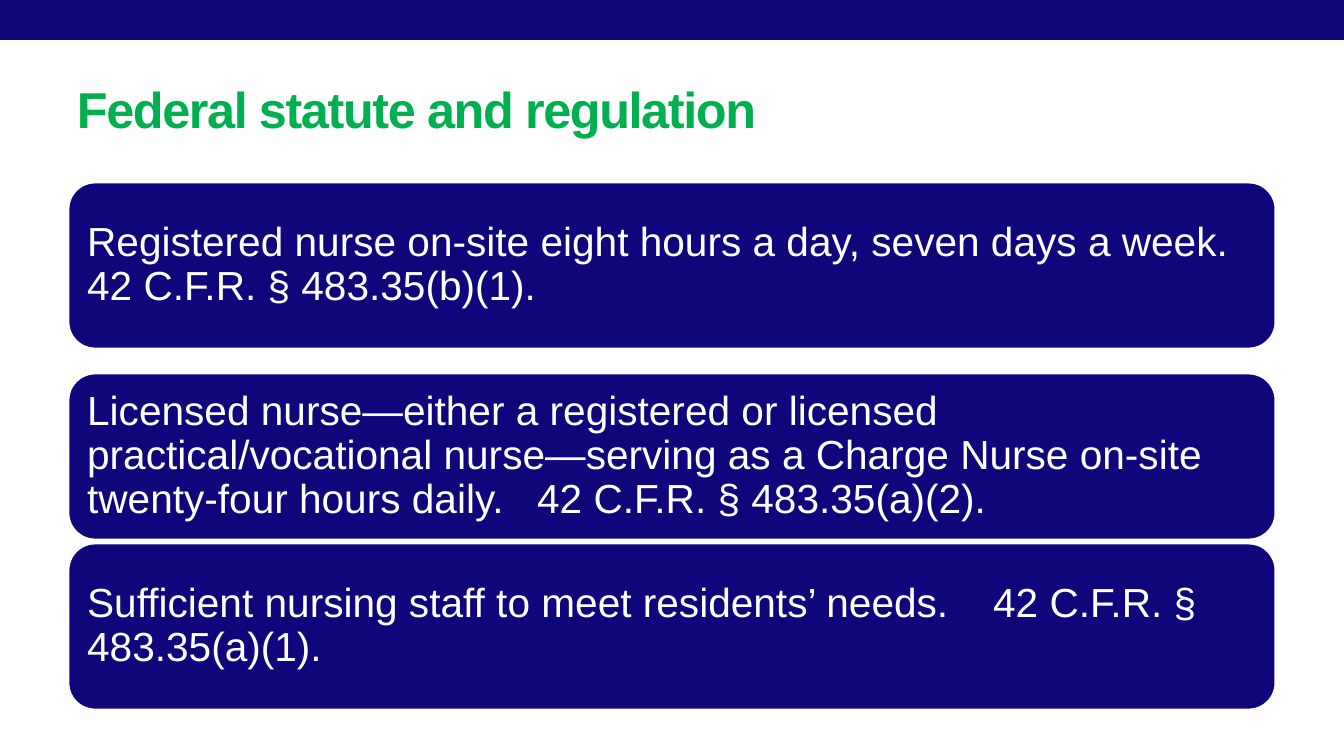
from lxml import etree
from pptx import Presentation
from pptx.dml.color import RGBColor
from pptx.enum.shapes import MSO_SHAPE
from pptx.enum.text import MSO_ANCHOR, PP_ALIGN
from pptx.oxml.ns import qn
from pptx.util import Pt

TITLE = "Federal statute and regulation"
# top of the panel, text, tab stop before the citation (None: no tab)
PANELS = [
    (181, "Registered nurse on-site eight hours a day, seven days a week. "
          "42 C.F.R. § 483.35(b)(1).", None),
    (372, "Licensed nurse—either a registered or licensed practical/vocational "
          "nurse—serving as a Charge Nurse on-site twenty-four hours daily.\t"
          "42 C.F.R. § 483.35(a)(2).", 450),
    (542, "Sufficient nursing staff to meet residents’ needs.\t"
          "42 C.F.R. § 483.35(a)(1).", 906),
]

NAVY = RGBColor(0x0F, 0x06, 0x7C)
GREEN = RGBColor(0x00, 0xB0, 0x50)
WHITE = RGBColor(0xFF, 0xFF, 0xFF)
RECTANGLE = MSO_SHAPE.RECTANGLE
ROUNDED = MSO_SHAPE.ROUNDED_RECTANGLE
MIDDLE = MSO_ANCHOR.MIDDLE
LEFT = PP_ALIGN.LEFT

SLIDE_WIDTH, SLIDE_HEIGHT = 1344, 756
BAR_HEIGHT = 40
MARGIN = 67
CONTENT_WIDTH = SLIDE_WIDTH - 2 * MARGIN
TITLE_TOP, TITLE_HEIGHT = 58, 109
PANEL_HEIGHT = 169
PANEL_INSET = 12


def px(length):
    return round(length * 914400 / 100.8)


def add_panel(slide, kind, left, top, width, height):
    panel = slide.shapes.add_shape(kind, px(left), px(top), px(width), px(height))
    panel.shadow.inherit = False
    panel.fill.solid()
    panel.fill.fore_color.rgb = NAVY
    panel.line.fill.background()
    return panel


def write(box, text, size, color, bold=False, tab=None):
    """Fill the box with one left-aligned paragraph and return its run."""
    frame = box.text_frame
    frame.word_wrap = True
    frame.vertical_anchor = MIDDLE
    para = frame.paragraphs[0]
    para.alignment = LEFT
    para.line_spacing = 0.9
    if tab:
        stops = etree.SubElement(para._p.get_or_add_pPr(), qn("a:tabLst"))
        etree.SubElement(stops, qn("a:tab"), pos=str(px(tab)), algn="l")
    para.font.name = "Arial"
    para.font.size = Pt(size)
    para.font.bold = bold
    para.font.color.rgb = color
    span = para.add_run()
    span.text = text
    return span


def main():
    deck = Presentation()
    deck.slide_width, deck.slide_height = px(SLIDE_WIDTH), px(SLIDE_HEIGHT)
    slide = deck.slides.add_slide(deck.slide_layouts[6])

    add_panel(slide, RECTANGLE, 0, 0, SLIDE_WIDTH, BAR_HEIGHT)

    title = slide.shapes.add_textbox(
        px(MARGIN), px(TITLE_TOP), px(CONTENT_WIDTH), px(TITLE_HEIGHT))
    span = write(title, TITLE, 36, GREEN, bold=True)
    span._r.get_or_add_rPr().set("spc", "-100")

    for top, text, tab in PANELS:
        panel = add_panel(slide, ROUNDED, MARGIN, top, CONTENT_WIDTH, PANEL_HEIGHT)
        panel.line.color.rgb = WHITE
        panel.line.width = Pt(3.5)
        frame = panel.text_frame
        frame.margin_left = frame.margin_right = px(PANEL_INSET)
        frame.margin_top = frame.margin_bottom = px(PANEL_INSET)
        write(panel, text, 29, WHITE, tab=tab)

    deck.save("out.pptx")


if __name__ == "__main__":
    main()
